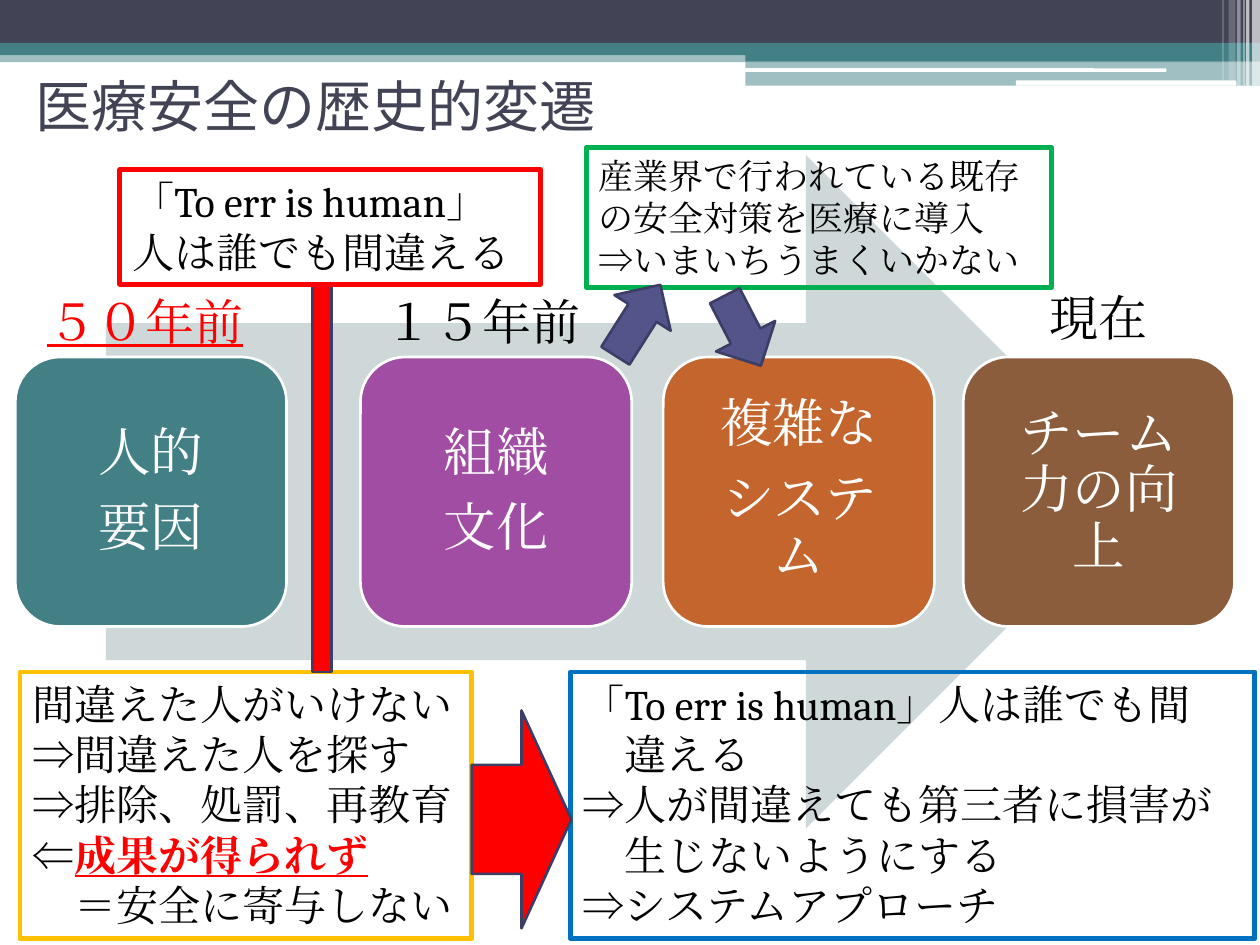
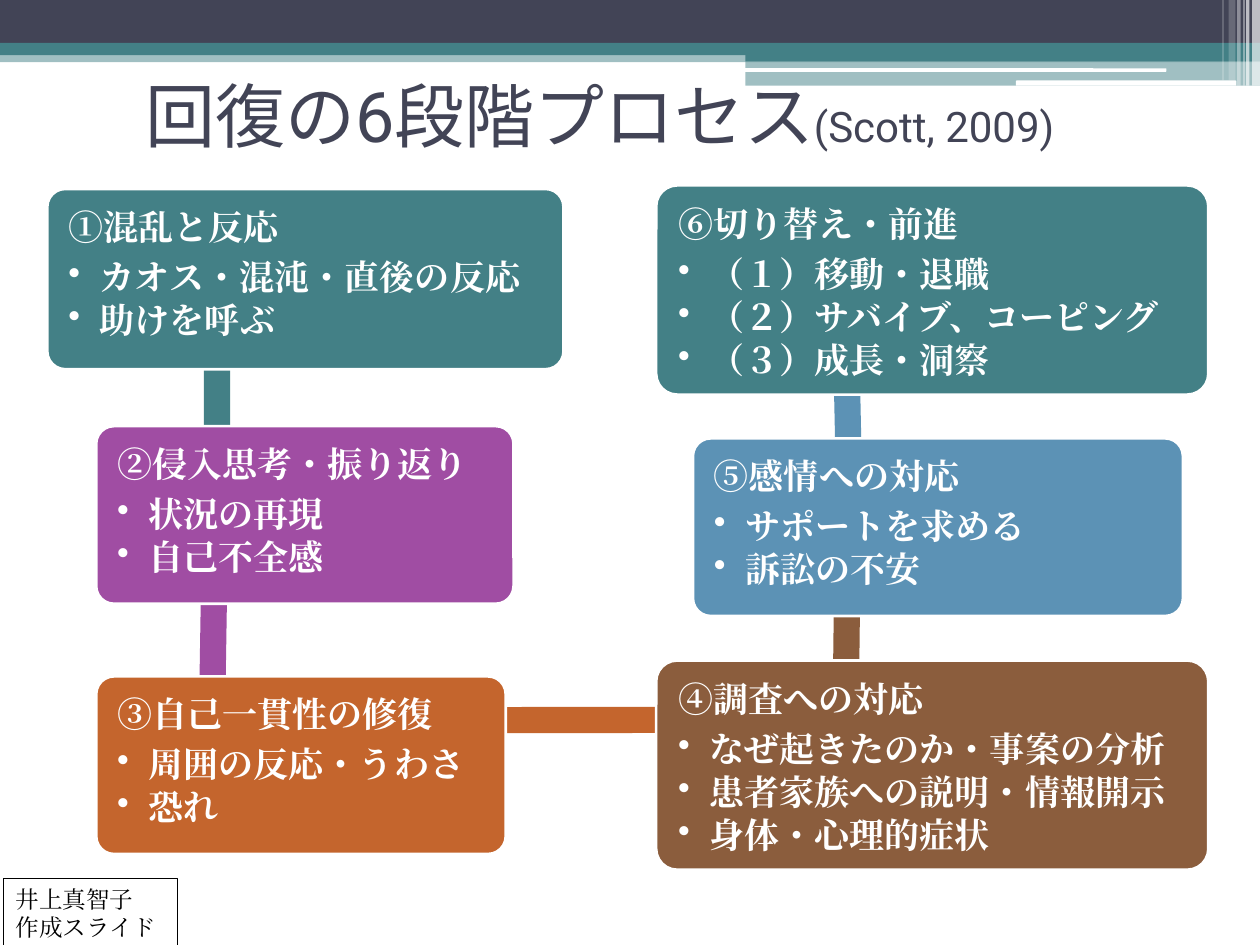
"""Build two slides on the history of medical safety and the six stages of recovery."""
from pptx import Presentation
from pptx import util as u
from pptx.dml.color import RGBColor
from pptx.enum import lang, shapes, text
from pptx.oxml.ns import qn
from lxml import etree

Pt = u.Pt
WHITE = RGBColor(0xFF, 0xFF, 0xFF)
BLACK = RGBColor(0x00, 0x00, 0x00)
SLATE = RGBColor(0x42, 0x44, 0x56)
TEAL = RGBColor(0x43, 0x80, 0x86)
PURPLE = RGBColor(0xA0, 0x4D, 0xA3)
ORANGE = RGBColor(0xC4, 0x65, 0x2D)
BROWN = RGBColor(0x8B, 0x5D, 0x3D)
SKY = RGBColor(0x5C, 0x92, 0xB5)
INDIGO = RGBColor(0x53, 0x54, 0x8A)
NAVY = RGBColor(0x3D, 0x3E, 0x66)
PALE = RGBColor(0xCF, 0xD8, 0xD9)
RED = RGBColor(0xFF, 0x00, 0x00)
YELLOW = RGBColor(0xFF, 0xC0, 0x00)
GREEN = RGBColor(0x00, 0xB0, 0x50)
BLUE = RGBColor(0x00, 0x70, 0xC0)

BODY_FONT = "Cambria"
TITLE_FONT = "Roboto"
RECTANGLE = shapes.MSO_SHAPE.RECTANGLE
ROUNDED = shapes.MSO_SHAPE.ROUNDED_RECTANGLE
ARROW = shapes.MSO_SHAPE.RIGHT_ARROW
MIDDLE = text.MSO_ANCHOR.MIDDLE
CENTER = text.PP_ALIGN.CENTER

BANDS = [
    (RECTANGLE, 0, 29, 720, 6.5, TEAL, 50),
    (RECTANGLE, 0, 0, 720, 24.5, SLATE, 100),
    (RECTANGLE, 0, 24.5, 720, 7, TEAL, 100),
    (RECTANGLE, 426, 28, 294, 7, TEAL, 100),
    (RECTANGLE, 426, 35, 294, 14, TEAL, 50),
    (ROUNDED, 425.5, 39, 241, 2, WHITE, 100),
    (ROUNDED, 580.5, 46, 126, 3, WHITE, 100),
]
STRIPES = [
    (715.5, 4.5, 49, 65),
    (712, 2, 49, 65),
    (710.5, 0.75, 49, 60),
    (707, 2, 49, 40),
    (702, 4, 46, 20),
    (698.5, 0.75, 46, 30),
]


class Deck:
    """Holds the shared style and the current slide."""

    def __init__(self):
        self.presentation = Presentation()
        self.presentation.slide_width = Pt(720)
        self.presentation.slide_height = Pt(540)
        self.slide = None

    def new_slide(self):
        """Add a blank slide with the header bands."""
        self.slide = self.presentation.slides.add_slide(self.presentation.slide_layouts[6])
        for kind, left, top, width, height, color, opacity in BANDS:
            self.shape(kind, (left, top, width, height), color, opacity=opacity)
        for left, width, height, opacity in STRIPES:
            self.shape(RECTANGLE, (left, 0, width, height), WHITE, opacity=opacity)

    def shape(self, kind, box, fill=None, line=None, weight=1.5, rotation=0, opacity=100):
        """Add a preset shape without shadow."""
        shape = self.slide.shapes.add_shape(kind, *map(Pt, box))
        shape.shadow.inherit = False
        shape.rotation = rotation
        if fill is None:
            shape.fill.background()
        else:
            shape.fill.solid()
            shape.fill.fore_color.rgb = fill
        if opacity < 100:
            color = shape.element.spPr.find(f"{qn('a:solidFill')}/{qn('a:srgbClr')}")
            etree.SubElement(color, qn("a:alpha"), val=str(opacity * 1000))
        if line is None:
            shape.line.fill.background()
        else:
            shape.line.color.rgb = line
            shape.line.width = Pt(weight)
        return shape

    def style(self, font, size, color, name=BODY_FONT, bold=False, underline=False):
        """Set every font property, for Latin and East Asian text alike."""
        font.name, font.size, font.bold, font.underline = name, Pt(size), bold, underline
        font.color.rgb = color
        font.language_id = lang.MSO_LANGUAGE_ID.JAPANESE
        east_asian = etree.Element(qn("a:ea"), typeface=name)
        font._rPr.find(qn("a:latin")).addnext(east_asian)

    def frame(self, shape, margins=(7.2, 3.6), anchor=text.MSO_ANCHOR.TOP):
        """Prepare the text frame of a shape."""
        frame = shape.text_frame
        frame.word_wrap = True
        frame.vertical_anchor = anchor
        frame.margin_left = frame.margin_right = Pt(margins[0])
        frame.margin_top = frame.margin_bottom = Pt(margins[1])
        return frame

    def paragraph(self, frame, words, size, color=BLACK, align=text.PP_ALIGN.LEFT,
                  spacing=None, after=0, indent=0, bullet=False, **font):
        """Write one paragraph, reusing the empty first one."""
        paragraph = frame.paragraphs[0]
        if paragraph.runs:
            paragraph = frame.add_paragraph()
        paragraph.alignment = align
        paragraph.space_after = Pt(after)
        if spacing:
            paragraph.line_spacing = spacing
        properties = paragraph._p.get_or_add_pPr()
        properties.set("marL", str(Pt(indent)))
        if bullet:
            properties.set("indent", str(-Pt(indent)))
            etree.SubElement(properties, qn("a:buChar"), char="•")
        run = paragraph.add_run()
        run.text = words
        for target in (paragraph.font, run.font):
            self.style(target, size, color, **font)
        return paragraph

    def add_run(self, paragraph, words, size, color, **font):
        """Append a run with its own font."""
        run = paragraph.add_run()
        run.text = words
        self.style(run.font, size, color, **font)

    def textbox(self, box, **layout):
        """Add a text box and return its frame."""
        return self.frame(self.slide.shapes.add_textbox(*map(Pt, box)), **layout)

    def title(self, box, words, size):
        """Add the slide title."""
        return self.paragraph(self.textbox(box, anchor=MIDDLE), words, size, SLATE, name=TITLE_FONT)

    def label(self, box, words, color=BLACK, underline=False):
        """Add a period label."""
        self.paragraph(self.textbox(box), words, 28, color, underline=underline)

    def note(self, box, lines, line, fill=None, size=24, weight=2.75):
        """Add an outlined note; each line is its text and its indent."""
        frame = self.frame(self.shape(RECTANGLE, box, fill, line, weight))
        return [self.paragraph(frame, words, size, indent=indent) for words, indent in lines]

    def tile(self, left, color, lines):
        """Add a rounded tile of the timeline."""
        shape = self.shape(ROUNDED, (left, 204, 155, 154), color, WHITE)
        frame = self.frame(shape, (16, 16), MIDDLE)
        for words in lines:
            self.paragraph(frame, words, 30, WHITE, CENTER, spacing=0.9, after=10.5)

    def stage(self, box, color, heading, points):
        """Add a recovery stage with its bulleted points."""
        shape = self.shape(ROUNDED, box, color, WHITE)
        shape.adjustments[0] = 0.1
        frame = self.frame(shape, (9, 9))
        self.paragraph(frame, heading, 20, WHITE, spacing=0.9, after=7, bold=True)
        for point in points:
            self.paragraph(frame, point, 20, WHITE, spacing=0.9, after=3,
                           indent=18, bullet=True, bold=True)


def build_history(deck):
    """Build the timeline of medical safety."""
    deck.new_slide()
    deck.title((13, 18, 700, 84), "医療安全の歴史的変遷", 32)
    deck.shape(ARROW, (60.5, 88.5, 592.5, 385), PALE)
    for left, color, lines in [
        (8.75, TEAL, ["人的", "要因"]),
        (206, PURPLE, ["組織", "文化"]),
        (379, ORANGE, ["複雑な", "システム"]),
        (550.5, BROWN, ["チーム力の向上"]),
    ]:
        deck.tile(left, color, lines)
    deck.label((20, 163, 148, 41), "５０年前", RED, underline=True)
    deck.label((212.5, 163, 148, 41), "１５年前")
    deck.label((592.5, 160.5, 79, 41), "現在")
    deck.note((326, 384, 391, 152.5), [
        ("「To err is human」人は誰でも間", 0),
        ("違える", 24),
        ("⇒人が間違えても第三者に損害が", 0),
        ("生じないようにする", 24),
        ("⇒システムアプローチ", 0),
    ], BLUE)
    blame = deck.note((11.5, 384, 258, 152.5), [
        ("間違えた人がいけない", 0),
        ("⇒間違えた人を探す", 0),
        ("⇒排除、処罰、再教育", 0),
        ("⇐", 0),
        ("＝安全に寄与しない", 24),
    ], YELLOW, WHITE)
    deck.add_run(blame[3], "成果が得られず", 24, RED, bold=True, underline=True)
    deck.shape(ARROW, (269.5, 406, 57, 124.5), RED, NAVY)
    deck.shape(RECTANGLE, (178.5, 163, 11, 221), RED, NAVY)
    deck.note((68.5, 97, 240.5, 65.5), [("「To err is human」", 0), ("人は誰でも間違える", 0)], RED)
    deck.note((335, 84.5, 266, 80), [
        ("産業界で行われている既存の安全対策を医療に導入", 0),
        ("⇒いまいちうまくいかない", 0),
    ], GREEN, size=20)
    deck.shape(ARROW, (340.5, 164, 48, 38), INDIGO, NAVY, rotation=302.4)
    deck.shape(ARROW, (402, 170, 45, 38), INDIGO, NAVY, rotation=62.7)


def build_recovery(deck):
    """Build the six linked stages of recovery."""
    deck.new_slide()
    title = deck.title((76, 26, 596, 79), "回復の6段階プロセス", 40)
    deck.add_run(title, "(Scott, 2009)", 24, SLATE, name=TITLE_FONT)
    stages = [
        ((27, 108, 295, 103), TEAL, "①混乱と反応",
         ["カオス・混沌・直後の反応", "助けを呼ぶ"], (57, 193, 134, 15), 90),
        ((55, 243.5, 238.5, 101.5), PURPLE, "②侵入思考・振り返り",
         ["状況の再現", "自己不全感"], (51, 332.5, 142.5, 15), 90.9),
        ((55, 386.5, 234, 101.5), ORANGE, "③自己一貫性の修復",
         ["周囲の反応・うわさ", "恐れ"], (121.5, 404, 360, 15), 359.9),
        ((375, 377.5, 315.5, 119.5), BROWN, "④調査への対応",
         ["なぜ起きたのか・事案の分析", "患者家族への説明・情報開示", "身体・心理的症状"],
         (416, 335.5, 136, 15), 270.7),
        ((396, 250.5, 280, 101.5), SKY, "⑤感情への対応",
         ["サポートを求める", "訴訟の不安"], (416, 199.5, 135.5, 15), 268.8),
        ((375, 106, 315.5, 119.5), TEAL, "⑥切り替え・前進",
         ["（１）移動・退職", "（２）サバイブ、コーピング", "（３）成長・洞察"], None, 0),
    ]
    for box, color, heading, points, link, rotation in stages:
        if link:
            deck.shape(RECTANGLE, link, color, rotation=rotation)
        deck.stage(box, color, heading, points)
    deck.note((2, 502, 99.5, 40), [("井上真智子", 0), ("作成スライド", 0)], BLACK, size=13.5, weight=0.75)


def main():
    """Build and save the presentation."""
    deck = Deck()
    build_history(deck)
    build_recovery(deck)
    deck.presentation.save("out.pptx")


if __name__ == "__main__":
    main()
